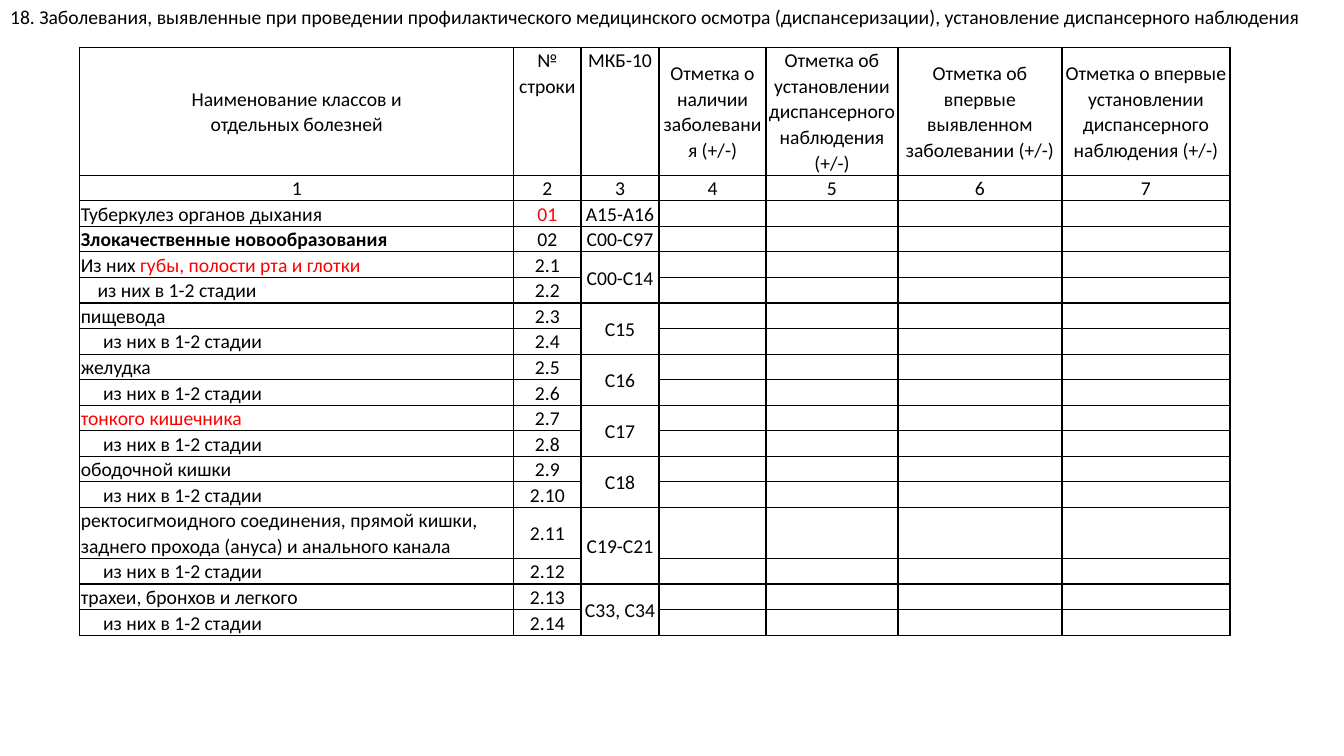
from lxml.etree import SubElement
from pptx import Presentation
from pptx.dml.color import RGBColor
from pptx.enum.text import MSO_ANCHOR as Anchor, MSO_AUTO_SIZE as AutoSize, PP_ALIGN as Align
from pptx.oxml import parse_xml
from pptx.oxml.ns import nsdecls, qn
from pptx.util import Pt

BLACK, RED = "000000", "FF0000"
FONT_SIZE = 14
COLUMN_WIDTHS = [310, 48, 55.8, 76.4, 94.2, 117.2, 120]
HEADER_HEIGHT, LINE_HEIGHT = 90, 18
HEADINGS = [
    "Наименование классов и\nотдельных болезней",
    "№ строки",
    "МКБ-10",
    "Отметка о наличии заболевания (+/-)",
    "Отметка об установлении диспансерного наблюдения (+/-)",
    "Отметка об впервые выявленном заболевании (+/-)",
    "Отметка о впервые установлении диспансерного наблюдения (+/-)",
]
STAGES = "из них в 1-2 стадии"
LONG_SITE = "ректосигмоидного соединения, прямой кишки, заднего прохода (ануса) и анального канала"
TUMOUR_SITES = [
    ("Из них ", "С00-С14"),
    ("пищевода", "С15"),
    ("желудка", "С16"),
    ("тонкого кишечника", "С17"),
    ("ободочной кишки", "С18"),
    (LONG_SITE, "С19-С21"),
    ("трахеи, бронхов и легкого", "С33, С34"),
]
FIRST_SITE_ROW = 4


def rgb(value):
    return RGBColor.from_string(value)


def format_run(run, color=BLACK, bold=False):
    run.font.name = "Calibri"
    run.font.size = Pt(FONT_SIZE)
    run.font.bold = bold
    run.font.color.rgb = rgb(color)


def write_cell(cell, text, align=Align.CENTER, color=BLACK, bold=False, indent=0):
    cell.text_frame.text = text
    for paragraph in cell.text_frame.paragraphs:
        paragraph.alignment = align
        paragraph.line_spacing = 1.07
        if indent:
            paragraph._p.get_or_add_pPr().set("marL", str(Pt(indent)))
        for run in paragraph.runs:
            format_run(run, color, bold)


def prepare_cell(cell):
    cell.margin_left = cell.margin_right = Pt(0.7)
    cell.margin_top = cell.margin_bottom = 0
    cell.vertical_anchor = Anchor.MIDDLE
    properties = cell._tc.get_or_add_tcPr()
    for side in ("lnL", "lnR", "lnT", "lnB"):
        properties.append(parse_xml(
            f'<a:{side} {nsdecls("a")} w="{Pt(1)}"><a:solidFill>'
            f'<a:srgbClr val="{BLACK}"/></a:solidFill></a:{side}>'))
    cell.fill.background()
    empty_line = cell.text_frame.paragraphs[0]._p
    SubElement(empty_line, qn("a:endParaRPr"), sz=str(FONT_SIZE * 100))


def write_header(table):
    for column, heading in enumerate(HEADINGS):
        write_cell(table.cell(0, column), heading)
        write_cell(table.cell(1, column), str(column + 1))
    for column in (1, 2):
        table.cell(0, column).vertical_anchor = Anchor.TOP


def write_classes(table):
    write_cell(table.cell(2, 0), "Туберкулез органов дыхания", Align.LEFT)
    write_cell(table.cell(2, 1), "01", color=RED)
    write_cell(table.cell(2, 2), "А15-А16")
    write_cell(table.cell(3, 0), "Злокачественные новообразования", Align.LEFT, bold=True)
    write_cell(table.cell(3, 1), "02")
    write_cell(table.cell(3, 2), "С00-С97")


def write_sites(table):
    for index, (site, code) in enumerate(TUMOUR_SITES):
        row = FIRST_SITE_ROW + 2 * index
        site_color = RED if site == "тонкого кишечника" else BLACK
        write_cell(table.cell(row, 0), site, Align.LEFT, site_color)
        write_cell(table.cell(row + 1, 0), STAGES, Align.LEFT, indent=16 if index else 12)
        for offset in (0, 1):
            write_cell(table.cell(row + offset, 1), f"2.{2 * index + offset + 1}")
        write_cell(table.cell(row, 2), code)
        table.cell(row, 2).merge(table.cell(row + 1, 2))
        if site == LONG_SITE:
            table.rows[row].height = Pt(2 * LINE_HEIGHT)
    mouth = table.cell(FIRST_SITE_ROW, 0).text_frame.paragraphs[0].add_run()
    mouth.text = "губы, полости рта и глотки"
    format_run(mouth, RED)


def add_disease_table(slide, left, top, width, height):
    row_count = FIRST_SITE_ROW + 2 * len(TUMOUR_SITES)
    table = slide.shapes.add_table(
        row_count, len(COLUMN_WIDTHS), Pt(left), Pt(top), Pt(width), Pt(height)).table
    table.first_row = table.horz_banding = False
    for column, column_width in zip(table.columns, COLUMN_WIDTHS):
        column.width = Pt(column_width)
    for row in table.rows:
        row.height = Pt(LINE_HEIGHT)
    table.rows[0].height = Pt(HEADER_HEIGHT)
    for cell in table.iter_cells():
        prepare_cell(cell)
    write_header(table)
    write_classes(table)
    write_sites(table)


def add_heading(slide, left, top, width, height):
    heading = slide.shapes.title
    heading.left, heading.top = Pt(left), Pt(top)
    heading.width, heading.height = Pt(width), Pt(height)
    frame = heading.text_frame
    frame.text = ("18. Заболевания, выявленные при проведении профилактического медицинского "
                  "осмотра (диспансеризации), установление диспансерного наблюдения")
    frame.word_wrap = True
    frame.auto_size = AutoSize.NONE
    frame.vertical_anchor = Anchor.TOP
    frame.paragraphs[0].alignment = Align.LEFT
    format_run(frame.paragraphs[0].runs[0])


def main():
    presentation = Presentation()
    presentation.slide_width, presentation.slide_height = Pt(960), Pt(540)
    slide = presentation.slides.add_slide(presentation.slide_layouts[5])
    add_heading(slide, 0, 0, 960, 24.5)
    add_disease_table(slide, 57, 34, sum(COLUMN_WIDTHS), 414)
    presentation.save("out.pptx")


if __name__ == "__main__":
    main()
